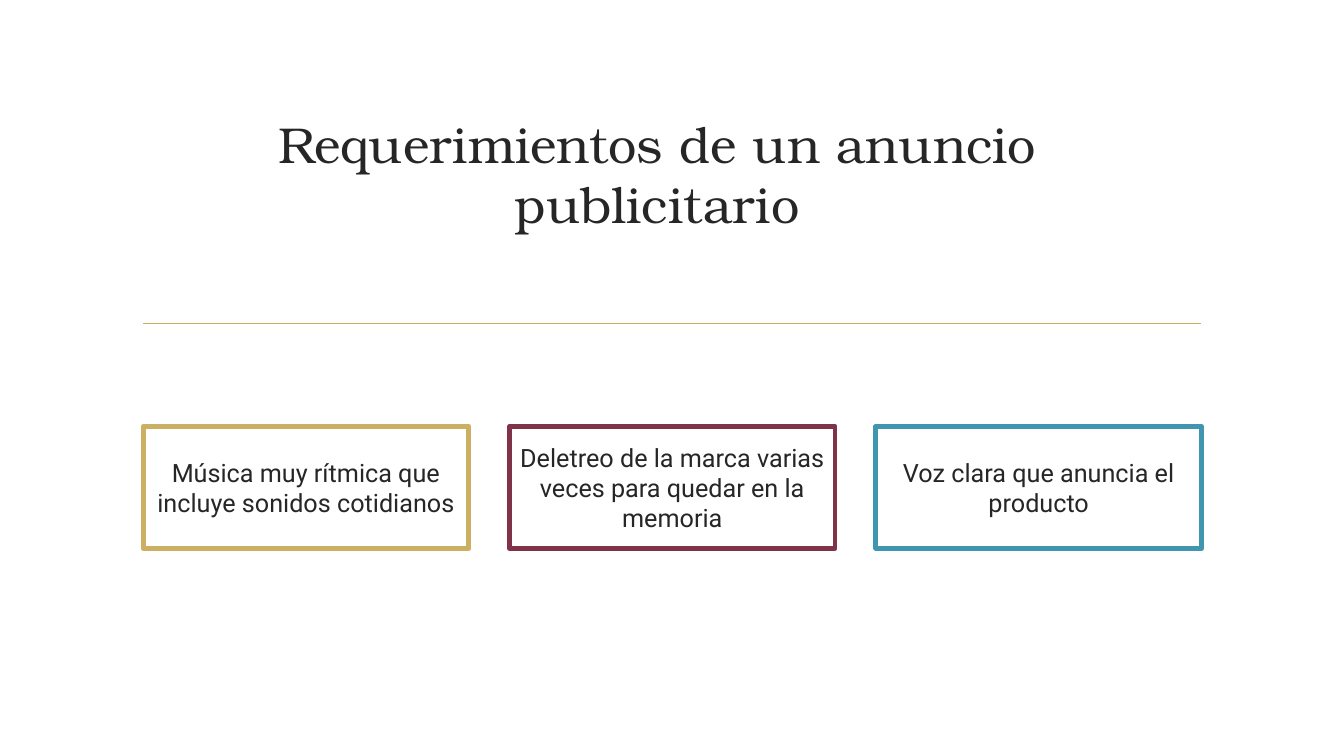
import pptx
import pptx.dml.color
import pptx.enum.shapes
import pptx.enum.text
import pptx.oxml
import pptx.util

Pt = pptx.util.Pt
CENTER = pptx.enum.text.PP_ALIGN.CENTER
INK = "262626"
GOLD = "CBAF62"
LEFT, RIGHT = 102.24, 858.24
BOX_WIDTH = 232.56


def color(hex_code):
    return pptx.dml.color.RGBColor.from_string(hex_code)


def write(frame, text, font_name, size, anchor):
    """Fill a text frame with one centred paragraph."""
    frame.text = text
    frame.word_wrap = True
    frame.auto_size = pptx.enum.text.MSO_AUTO_SIZE.NONE
    frame.vertical_anchor = anchor
    paragraph = frame.paragraphs[0]
    paragraph.alignment = CENTER
    font = paragraph.runs[0].font
    font.name = font_name
    font.size = Pt(size)
    font.color.rgb = color(INK)


presentation = pptx.Presentation()
presentation.slide_width = Pt(960)
presentation.slide_height = Pt(540)
slide = presentation.slides.add_slide(presentation.slide_layouts[5])

divider = slide.shapes.add_connector(
    pptx.enum.shapes.MSO_CONNECTOR.STRAIGHT, Pt(LEFT), Pt(231.12), Pt(RIGHT), Pt(231.12)
)
divider.line.color.rgb = color(GOLD)
divider.line.width = Pt(1.25)
divider.element.spPr.append(pptx.oxml.parse_xml(
    '<a:effectLst xmlns:a="http://schemas.openxmlformats.org/drawingml/2006/main"/>'
))

title = slide.shapes.title
title.left, title.top = Pt(91.44), Pt(27.36)
title.width, title.height = Pt(756), Pt(143.28)
write(title.text_frame, "Requerimientos de un anuncio publicitario",
      "TeX Gyre Bonum", 36, pptx.enum.text.MSO_ANCHOR.BOTTOM)

requirements = [
    ("Música muy rítmica que incluye sonidos cotidianos", GOLD),
    ("Deletreo de la marca varias veces para quedar en la memoria", "803348"),
    ("Voz clara que anuncia el producto", "4096B0"),
]
step = (RIGHT - LEFT - BOX_WIDTH) / (len(requirements) - 1)
for index, (requirement, border) in enumerate(requirements):
    box = slide.shapes.add_shape(
        pptx.enum.shapes.MSO_SHAPE.RECTANGLE,
        Pt(LEFT + index * step), Pt(304.56), Pt(BOX_WIDTH), Pt(87.12),
    )
    box.shadow.inherit = False
    box.fill.background()
    box.line.color.rgb = color(border)
    box.line.width = Pt(3.5)
    write(box.text_frame, requirement, "Roboto", 18, pptx.enum.text.MSO_ANCHOR.MIDDLE)
    box.text_frame.paragraphs[0].space_after = Pt(6)

presentation.save("out.pptx")
